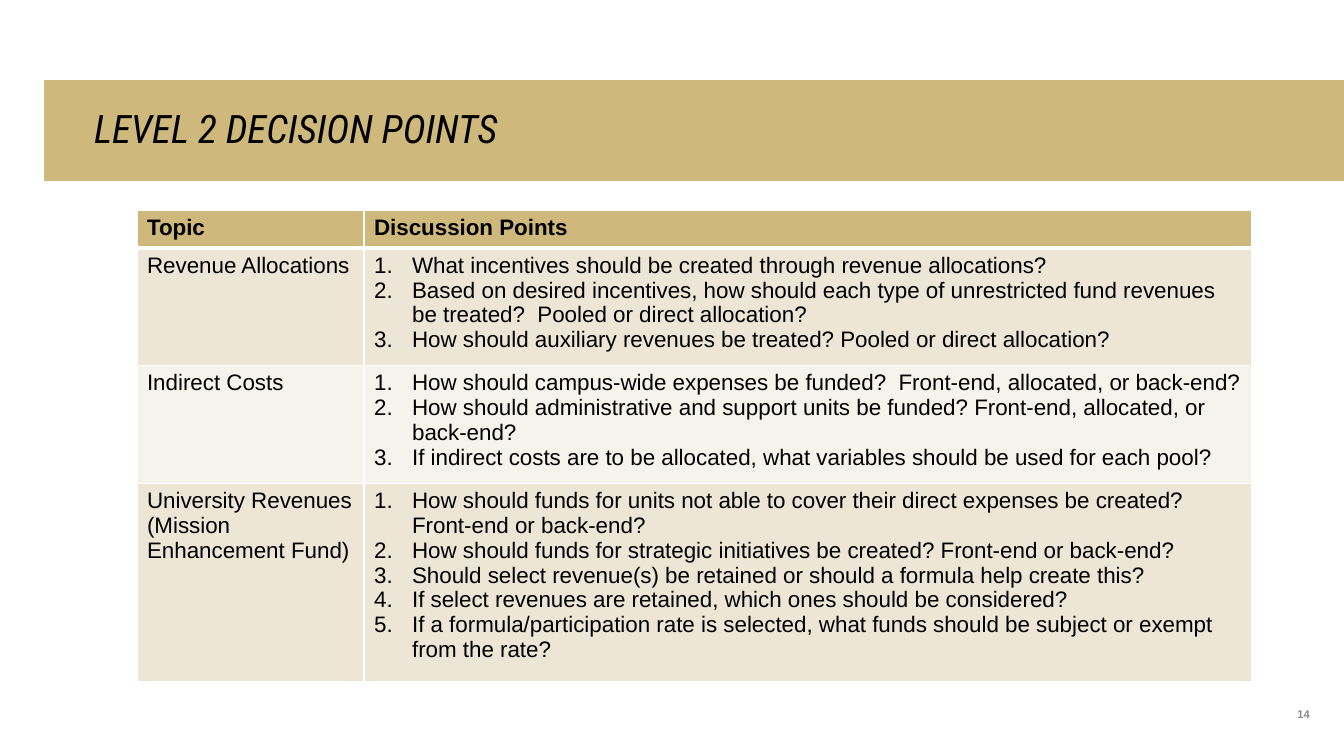
"""Build the Level 2 decision points slide."""
from lxml.etree import SubElement
from pptx import Presentation
from pptx.dml.color import RGBColor
from pptx.enum.text import MSO_ANCHOR as ANCHOR, MSO_AUTO_SIZE as AUTO, PP_ALIGN as ALIGN
from pptx.oxml.ns import qn
from pptx.util import Emu, Pt

TITLE = "LEVEL 2 DECISION POINTS"
PAGE = "14"
HEADER = ("Topic", "Discussion Points")
TOPICS = [
    ("Revenue Allocations", [
        "What incentives should be created through revenue allocations?",
        "Based on desired incentives, how should each type of unrestricted fund revenues "
        "be treated?  Pooled or direct allocation?",
        "How should auxiliary revenues be treated? Pooled or direct allocation?",
    ]),
    ("Indirect Costs", [
        "How should campus-wide expenses be funded?  Front-end, allocated, or back-end?",
        "How should administrative and support units be funded? Front-end, allocated, "
        "or back-end?",
        "If indirect costs are to be allocated, what variables should be used for each pool?",
    ]),
    ("University Revenues (Mission Enhancement Fund)", [
        "How should funds for units not able to cover their direct expenses be created?  "
        "Front-end or back-end?",
        "How should funds for strategic initiatives be created? Front-end or back-end?",
        "Should select revenue(s) be retained or should a formula help create this?",
        "If select revenues are retained, which ones should be considered?",
        "If a formula/participation rate is selected, what funds should be subject or exempt "
        "from the rate?",
    ]),
]

SLIDE = (1344, 756)
TITLE_BOX = (44, 80, 1300, 101)
PAGE_BOX = (1225, 671, 85, 50)
TABLE_POS = (137, 210)
COLS = (227, 888)
ROWS = (38, 110, 109, 184)
INDENT = 38

GOLD = RGBColor(0xCF, 0xB8, 0x7C)
SAND = RGBColor(0xED, 0xE6, 0xD7)
CREAM = RGBColor(0xF6, 0xF3, 0xEC)
BLACK = RGBColor(0, 0, 0)
GREY = RGBColor(0x8C, 0x8C, 0x8C)
WHITE = RGBColor(0xFF, 0xFF, 0xFF)


def px(n):
    return Emu(round(n * 914400 / 100.8))


def add_run(p, text, size, color=BLACK, font="Arial", bold=False, italic=False):
    r = p.add_run()
    r.text = text
    r.font.size, r.font.name = Pt(size), font
    r.font.bold, r.font.italic = bold, italic
    r.font.color.rgb = color


def place(sp, box):
    sp.left, sp.top, sp.width, sp.height = map(px, box)


def set_margins(tf, left, top, right, bottom):
    tf.margin_left, tf.margin_top = px(left), px(top)
    tf.margin_right, tf.margin_bottom = px(right), px(bottom)


def number(p):
    pPr = p._p.get_or_add_pPr()
    pPr.set("marL", str(px(INDENT)))
    pPr.set("indent", str(-px(INDENT)))
    SubElement(pPr, qn("a:buFont"), typeface="+mj-lt")
    SubElement(pPr, qn("a:buAutoNum"), type="arabicPeriod")


def set_borders(cell, widths):
    tcPr = cell._tc.get_or_add_tcPr()
    for side, width in widths.items():
        ln = SubElement(tcPr, qn(f"a:ln{side}"), w=str(Pt(width)))
        fill = SubElement(ln, qn("a:solidFill"))
        SubElement(fill, qn("a:srgbClr"), val=str(WHITE))


def fill_cell(cell, lines, color, bold=False, numbered=False, top=1, bottom=1):
    set_borders(cell, {"L": 1, "R": 1, "T": top, "B": bottom})
    cell.fill.solid()
    cell.fill.fore_color.rgb = color
    tf = cell.text_frame
    for i, line in enumerate(lines):
        p = tf.add_paragraph() if i else tf.paragraphs[0]
        if numbered:
            number(p)
        add_run(p, line, 16, bold=bold)


def add_title(s):
    sp = s.shapes.title
    place(sp, TITLE_BOX)
    sp.fill.solid()
    sp.fill.fore_color.rgb = GOLD
    tf = sp.text_frame
    tf.auto_size, tf.word_wrap = AUTO.NONE, True
    tf.vertical_anchor = ANCHOR.MIDDLE
    set_margins(tf, 50, 5, 100, 5)
    p = tf.paragraphs[0]
    p.alignment, p.line_spacing = ALIGN.LEFT, 0.9
    add_run(p, TITLE, 28, font="Roboto Condensed", italic=True)


def add_page(s):
    tf = s.shapes.add_textbox(*map(px, PAGE_BOX)).text_frame
    tf.word_wrap, tf.vertical_anchor = True, ANCHOR.BOTTOM
    set_margins(tf, 0, 0, 0, 0)
    p = tf.paragraphs[0]
    p.alignment = ALIGN.RIGHT
    add_run(p, PAGE, 8, GREY, bold=True)


def add_topics(s):
    box = (*TABLE_POS, sum(COLS), sum(ROWS))
    table = s.shapes.add_table(len(ROWS), len(COLS), *map(px, box)).table
    for col, width in zip(table.columns, COLS):
        col.width = px(width)
    for row, height in zip(table.rows, ROWS):
        row.height = px(height)
    for c, text in enumerate(HEADER):
        fill_cell(table.cell(0, c), [text], GOLD, bold=True, bottom=3)
    for r, (topic, points) in enumerate(TOPICS, 1):
        color = SAND if r % 2 else CREAM
        top = 3 if r == 1 else 1
        fill_cell(table.cell(r, 0), [topic], color, top=top)
        fill_cell(table.cell(r, 1), points, color, numbered=True, top=top)


def main():
    prs = Presentation()
    prs.slide_width, prs.slide_height = map(px, SLIDE)
    s = prs.slides.add_slide(prs.slide_layouts[5])
    add_title(s)
    add_page(s)
    add_topics(s)
    prs.save("out.pptx")


if __name__ == "__main__":
    main()
